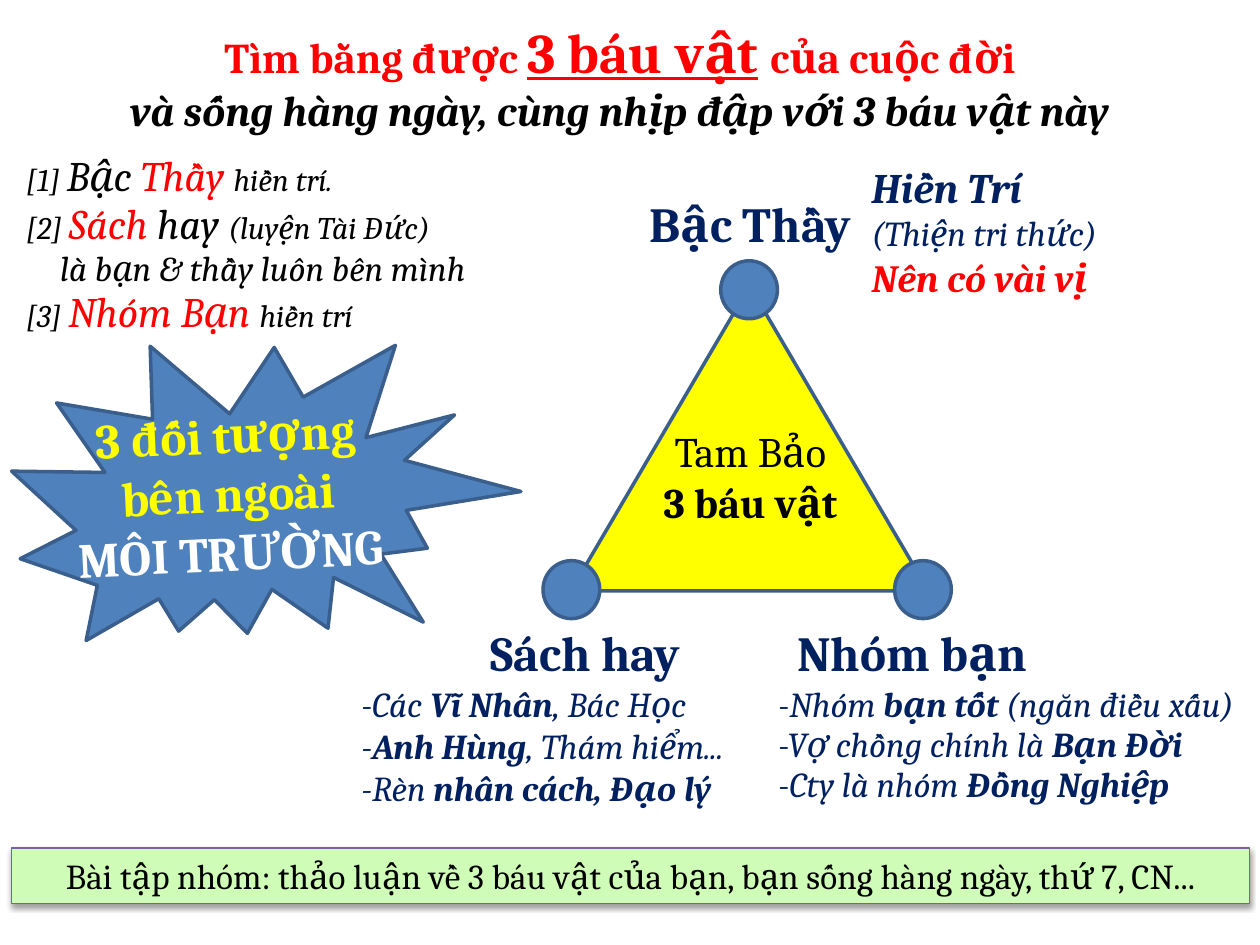
from dataclasses import dataclass, replace
from typing import Optional

from lxml.etree import SubElement
from pptx import Presentation
from pptx.dml.color import RGBColor
from pptx.enum.shapes import MSO_SHAPE as Geo
from pptx.enum.text import MSO_ANCHOR as Anchor, MSO_AUTO_SIZE as Auto, PP_ALIGN as Align
from pptx.oxml.ns import qn
from pptx.util import Inches, Pt

FONT = "Cambria"
COLORS = {
    "navy": "002060", "red": "FF0000", "black": "000000", "white": "FFFFFF",
    "yellow": "FFFF00", "blue": "4F81BD", "edge": "3A5F8C",
    "green": "CFFCB6", "purple": "7D60A0",
}


@dataclass
class Run:
    text: str
    size: float = 20
    color: str = "navy"
    bold: bool = False
    ital: bool = False
    under: bool = False


@dataclass
class Para:
    runs: list[Run]
    indent: float = 0


@dataclass
class Box:
    area: tuple[float, float, float, float]
    paras: list[Para]
    align: Align = Align.LEFT
    space: Optional[float] = None
    wrap: bool = True
    turn: float = 0


def rgb(name: str) -> RGBColor:
    return RGBColor.from_string(COLORS[name])


def line(*runs: Run, indent: float = 0) -> Para:
    return Para(list(runs), indent)


def note(text: str, bold: bool = False) -> Run:
    return Run(text, bold=bold, ital=True)


def lead(text: str, size: float = 18, color: str = "black") -> Run:
    return Run(text, size, color, ital=True)


def place(shape, area: tuple) -> None:
    shape.left, shape.top, shape.width, shape.height = map(Inches, area)


def write(frame, box: Box) -> None:
    frame.word_wrap = box.wrap
    frame.auto_size = Auto.NONE
    for i, para in enumerate(box.paras):
        p = frame.add_paragraph() if i else frame.paragraphs[0]
        p.alignment = box.align
        if box.space:
            p.line_spacing = box.space
        if para.indent:
            p._p.get_or_add_pPr().set("marL", str(Inches(para.indent)))
        for item in para.runs:
            run = p.add_run()
            run.text = item.text
            font = run.font
            font.name, font.size = FONT, Pt(item.size)
            font.bold, font.italic = item.bold, item.ital
            font.underline = item.under
            font.color.rgb = rgb(item.color)


def put_box(slide, box: Box) -> None:
    shape = slide.shapes.add_textbox(*map(Inches, box.area))
    shape.rotation = box.turn
    write(shape.text_frame, box)


def put_shape(slide, geo: Geo, area: tuple, fill: str,
              edge: str = "edge", width: float = 2):
    shape = slide.shapes.add_shape(geo, *map(Inches, area))
    shape.shadow.inherit = False
    shape.fill.solid()
    shape.fill.fore_color.rgb = rgb(fill)
    shape.line.color.rgb = rgb(edge)
    shape.line.width = Pt(width)
    return shape


def add_shade(shape) -> None:
    effects = shape._element.spPr.find(qn("a:effectLst"))
    shade = SubElement(effects, qn("a:outerShdw"), blurRad=str(Pt(3.1)),
                       dist=str(Pt(1.6)), dir="5400000", rotWithShape="0")
    tone = SubElement(shade, qn("a:srgbClr"), val=COLORS["black"])
    SubElement(tone, qn("a:alpha"), val="38000")


HEAD = Run("Tìm bằng được ", 24.2, "red", bold=True)
TITLE = Box((0.92, -0.04, 8, 1.29), [
    line(HEAD, replace(HEAD, text="3 báu vật", size=31.9, under=True),
         replace(HEAD, text=" ", size=31.9), replace(HEAD, text="của cuộc đời")),
    line(replace(HEAD, text="và sống hàng ngày, cùng nhịp đập với 3 báu vật này",
                 color="black", ital=True)),
], Align.CENTER)

CORNERS = [
    ("Bậc Thầy", (4.34, 1.49, 3.23, 0.57)),
    ("Nhóm bạn", (5.95, 4.89, 2.58, 0.57)),
    ("Sách hay", (3.37, 4.89, 2.55, 0.57)),
]

NOTES = [
    Box((5.15, 3.33, 1.61, 0.91), [
        line(Run("Tam Bảo", 24, "black")),
        line(Run("3 báu vật", 24, "black", bold=True)),
    ], Align.CENTER, wrap=False),
    Box((6.82, 1.23, 2.02, 1.21), [
        line(Run("Hiền Trí", 24, bold=True, ital=True)),
        line(note("(Thiện tri thức)")),
        line(Run("Nên có vài vị", 22, "red", bold=True, ital=True)),
    ], wrap=False),
    Box((6.08, 5.39, 3.83, 1.06), [
        line(note("-Nhóm "), note("bạn tốt ", True), note("(ngăn điều xấu)")),
        line(note("-Vợ chồng chính là "), note("Bạn Đời", True)),
        line(note("-Cty là nhóm "), note("Đồng Nghiệp", True)),
    ], space=0.95),
    Box((2.77, 5.37, 3.14, 1.11), [
        line(note("-Các "), note("Vĩ Nhân", True), note(", Bác Học")),
        line(note("-"), note("Anh Hùng", True), note(", Thám hiểm...")),
        line(note("-Rèn "), note("nhân cách, Đạo lý", True)),
    ], wrap=False),
    Box((0.11, 1.17, 3.8, 1.66), [
        line(lead("[1] "), lead("Bậc ", 24), lead("Thầy ", 24, "red"),
             lead("hiền trí.")),
        line(lead("[2] "), lead("Sách", 24, "red"), lead(" hay ", 24),
             lead("(luyện Tài Đức)")),
        line(lead("là bạn & thầy luôn bên mình", 20), indent=0.27),
        line(lead("[3] "), lead("Nhóm Bạn ", 24, "red"), lead("hiền trí")),
    ], space=0.95),
]

BURST = Box((0.37, 3.16, 2.88, 1.51), [
    line(Run("3 đối tượng bên ngoài", 28, "yellow", bold=True)),
    line(Run("MÔI TRƯỜNG", 28, "white", bold=True)),
], Align.CENTER, turn=357.3)

TASK = Box((0.09, 6.73, 9.83, 0.44), [
    line(Run("Bài tập nhóm: thảo luận về 3 báu vật của bạn, "
             "bạn sống hàng ngày, thứ 7, CN...", color="black")),
], Align.CENTER)

DOTS = [(4.31, 4.45), (7.1, 4.45), (5.72, 2.07)]


def main() -> None:
    deck = Presentation()
    deck.slide_width, deck.slide_height = Inches(10), Inches(7.5)
    slide = deck.slides.add_slide(deck.slide_layouts[5])

    # Title
    title = slide.shapes.title
    place(title, TITLE.area)
    title.text_frame.vertical_anchor = Anchor.MIDDLE
    write(title.text_frame, TITLE)

    # Triangle with its labels and notes
    put_shape(slide, Geo.ISOSCELES_TRIANGLE, (4.53, 2.27, 2.84, 2.42), "yellow")
    for name, area in CORNERS:
        put_box(slide, Box(area, [line(Run(name, 28, bold=True))], Align.CENTER))
    for box in NOTES:
        put_box(slide, box)

    # Burst
    burst = put_shape(slide, Geo.EXPLOSION2, (0.1, 2.52, 3.96, 2.87), "blue")
    burst.rotation = 14.1
    put_box(slide, BURST)

    # Task bar
    bar = put_shape(slide, Geo.RECTANGLE, TASK.area, "green", "purple", 0.75)
    add_shade(bar)
    write(bar.text_frame, TASK)

    # Corner dots
    for left, top in DOTS:
        put_shape(slide, Geo.OVAL, (left, top, 0.45, 0.46), "blue")

    deck.save("out.pptx")


if __name__ == "__main__":
    main()
